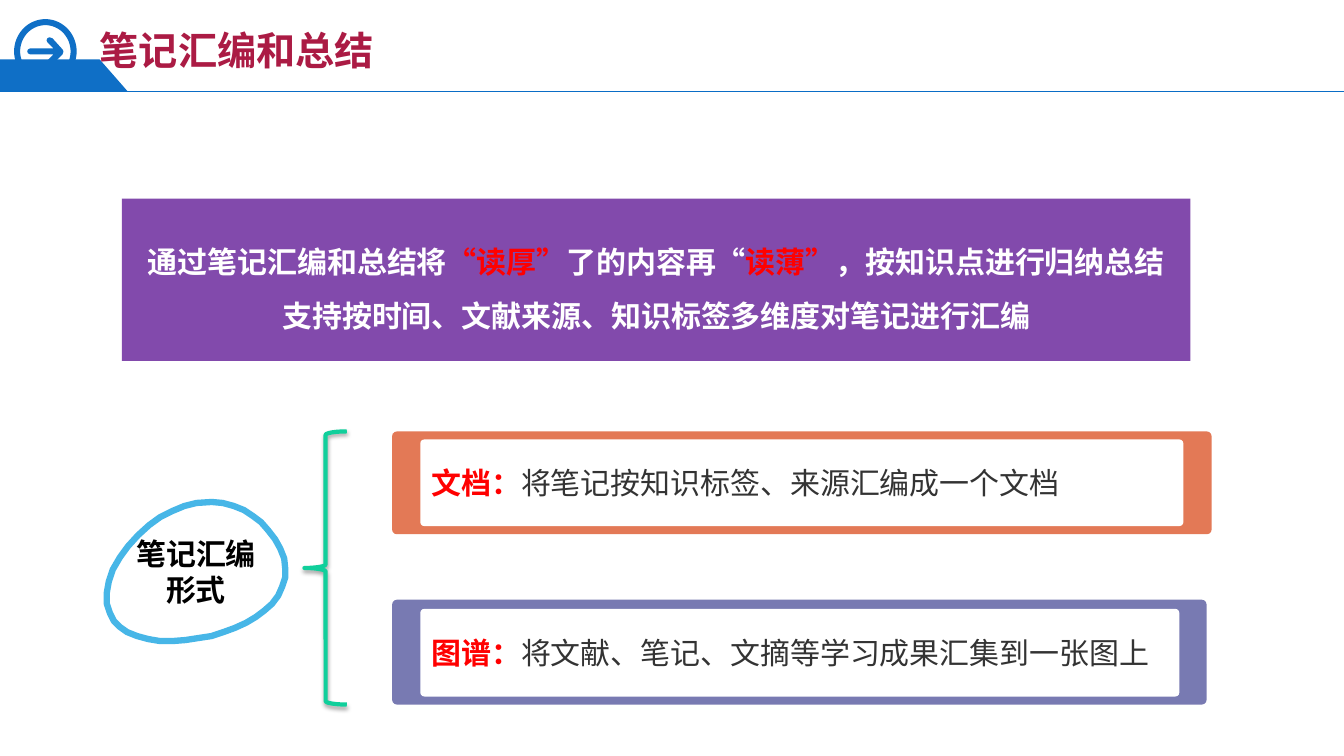
from dataclasses import dataclass
from math import cos, pi, sin

from lxml import etree
from pptx import Presentation, util as u
from pptx.dml.color import RGBColor
from pptx.enum import shapes, text
from pptx.oxml import ns

CELL = u.Inches(0.1)
COLS, ROWS = 133.33, 75
SIZE = 21.4
HAN = "Noto Sans CJK SC"
BLUE, RED, WHITE = "0F6FC6", "FF0000", "FFFFFF"
Point = tuple[float, float]


@dataclass
class Box:
    col: float
    row: float
    cols: float
    rows: float

    def place(self) -> list[int]:
        return [grid(n) for n in (self.col, self.row, self.cols, self.rows)]


@dataclass
class Run:
    words: str
    color: str
    bold: bool = True


@dataclass
class Card:
    frame: Box
    panel: Box
    color: str
    runs: list[Run]


def grid(n: float) -> int:
    return round(n * CELL)


def rgb(code: str) -> RGBColor:
    return RGBColor.from_string(code)


def child(parent, tag: str, **attrs: str):
    return etree.SubElement(parent, ns.qn(tag), **attrs)


def paint(shape, fill: str = "", line: str = "", width: float = 1) -> None:
    shape.shadow.inherit = False
    if fill:
        shape.fill.solid()
        shape.fill.fore_color.rgb = rgb(fill)
    else:
        shape.fill.background()
    if line:
        shape.line.color.rgb = rgb(line)
        shape.line.width = u.Pt(width)
    else:
        shape.line.fill.background()


def write(shape, lines: list[list[Run]], align, face: str,
          size: float = SIZE, space: float = 1, pad: float = 0.05) -> None:
    frame = shape.text_frame
    frame.word_wrap = True
    frame.vertical_anchor = text.MSO_ANCHOR.MIDDLE
    frame.margin_left = frame.margin_right = u.Inches(0.1)
    frame.margin_top = frame.margin_bottom = u.Inches(pad)
    for i, runs in enumerate(lines):
        para = frame.add_paragraph() if i else frame.paragraphs[0]
        para.alignment = align
        para.line_spacing = space
        for item in runs:
            run = para.add_run()
            run.text = item.words
            run.font.size = u.Pt(size)
            run.font.bold = item.bold
            run.font.name = face
            run.font.color.rgb = rgb(item.color)
            child(run.font._element, "a:ea", typeface=HAN)


def add(tree, kind, box: Box, fill: str = "", line: str = "", width: float = 1):
    shape = tree.add_shape(kind, *box.place())
    paint(shape, fill, line, width)
    return shape


def trace(tree, paths: list[list[Point]]):
    first, *rest = [[(grid(x), grid(y)) for x, y in path] for path in paths]
    pen = tree.build_freeform(*first[0])
    pen.add_line_segments(first[1:], close=True)
    for path in rest:
        pen.move_to(*path[0])
        pen.add_line_segments(path[1:], close=True)
    return pen.convert_to_shape()


def ring(x: float, y: float, wide: float, high: float) -> list[Point]:
    turns = [2 * pi * i / 72 for i in range(72)]
    return [(x + wide * cos(t), y + high * sin(t)) for t in turns]


ARROW = [(4.9, 3.7), (5.2, 3.8), (6.2, 4.9), (6.3, 5.1), (6.2, 5.4),
         (5.2, 6.4), (4.95, 6.55), (4.7, 6.4), (4.62, 6.2), (4.7, 6),
         (5.3, 5.4), (3, 5.4), (2.78, 5.3), (2.7, 5.1), (2.78, 4.9),
         (3, 4.8), (5.3, 4.8), (4.7, 4.2), (4.62, 4), (4.7, 3.8)]
BLOB = [(21, 49.8), (22.1, 49.9), (23.2, 50.2), (24.2, 50.6), (25.1, 51.2),
        (25.9, 51.8), (26.6, 52.6), (27.3, 53.5), (27.8, 54.4), (28.2, 55.4),
        (28.3, 56.4), (28.3, 57.3), (28, 58.2), (27.6, 59.1), (27, 59.9),
        (26.2, 60.6), (25.4, 61.2), (24.4, 61.8), (23.3, 62.3), (22.2, 62.7),
        (21, 63.1), (19.7, 63.3), (18.4, 63.5), (17.1, 63.6), (15.9, 63.6),
        (14.7, 63.4), (13.6, 63.1), (12.6, 62.7), (11.9, 62.2), (11.3, 61.6),
        (10.9, 60.8), (10.6, 59.9), (10.6, 58.8), (10.8, 57.7), (11.2, 56.5),
        (11.9, 55.3), (12.7, 54.2), (13.7, 53.1), (14.8, 52.1), (15.9, 51.3),
        (17.1, 50.7), (18.3, 50.2), (19.5, 49.9)]
BANNER = [[Run("通过笔记汇编和总结将", WHITE), Run("“读厚”", RED),
           Run("了的内容再“", WHITE), Run("读薄”", RED),
           Run("，按知识点进行归纳总结", WHITE)],
          [Run("支持按时间、文献来源、知识标签多维度对笔记进行汇编", WHITE)]]
CARDS = [
    Card(Box(38.9, 42.8, 81.3, 10.2), Box(41.7, 43.6, 75.7, 8.6), "E37956",
         [Run("文档：", RED),
          Run("将笔记按知识标签、来源汇编成一个文档", "333333", False)]),
    Card(Box(38.9, 59.5, 80.8, 10.4), Box(41.7, 60.4, 75.3, 8.7), "787AB2",
         [Run("图谱：", RED),
          Run("将文献、笔记、文摘等学习成果汇集到一张图上", "333333", False)]),
]


def head(slide) -> None:
    tree = slide.shapes
    bar = trace(tree, [[(0, 5.9), (9.9, 5.9), (12.7, 9.1), (0, 9.1)]])
    paint(bar, BLUE)
    rule = tree.add_connector(shapes.MSO_CONNECTOR.STRAIGHT,
                              0, grid(9.1), grid(COLS), grid(9.1))
    rule.line.color.rgb = rgb("0A6DC6")
    rule.line.width = u.Pt(1)
    child(rule._element.spPr, "a:effectLst")
    title = tree.title
    title.left, title.top, title.width, title.height = Box(8.9, 2.1, 29.5, 5.7).place()
    write(title, [[Run("笔记汇编和总结", "AB1B44")]], text.PP_ALIGN.LEFT, "Calibri", 28)
    title.text_frame.word_wrap = False
    title._element.getparent().append(title._element)
    icon = trace(tree, [ring(4.5, 5.1, 3.1, 3.2), ring(4.5, 5.1, 2.5, 2.6), ARROW])
    paint(icon, BLUE)


def body(slide) -> None:
    tree = slide.shapes
    kind = shapes.MSO_SHAPE
    center = text.PP_ALIGN.CENTER
    banner = add(tree, kind.RECTANGLE, Box(12.1, 19.7, 106, 16.1), "7030A0")
    child(banner.fill._xPr.find(".//" + ns.qn("a:srgbClr")), "a:alpha", val="87000")
    write(banner, BANNER, center, HAN, space=1.5)
    for card in CARDS:
        group = tree.add_group_shape().shapes
        frame = add(group, kind.ROUNDED_RECTANGLE, card.frame, card.color)
        panel = add(group, kind.ROUNDED_RECTANGLE, card.panel, WHITE)
        frame.adjustments[0] = panel.adjustments[0] = 0.046
        write(panel, [card.runs], text.PP_ALIGN.LEFT, "Calibri", pad=0)
    blob = trace(tree, [BLOB])
    paint(blob, line="47B6E7", width=4.5)
    write(blob, [[Run(words, "000000")] for words in ("笔记汇编", "形式")], center, "Arial")
    brace = add(tree, kind.LEFT_BRACE, Box(30.2, 42.8, 4.2, 27.1), line="10CF9B", width=3)
    glow = child(brace._element.spPr.find(ns.qn("a:effectLst")), "a:outerShdw",
                 blurRad=str(u.Pt(3.1)), dist=str(u.Pt(1.8)), dir="5400000", rotWithShape="0")
    child(child(glow, "a:srgbClr", val="000000"), "a:alpha", val="35000")


def main() -> None:
    deck = Presentation()
    deck.slide_width, deck.slide_height = grid(COLS), grid(ROWS)
    slide = deck.slides.add_slide(deck.slide_layouts[5])
    head(slide)
    body(slide)
    deck.save("out.pptx")


if __name__ == "__main__":
    main()
